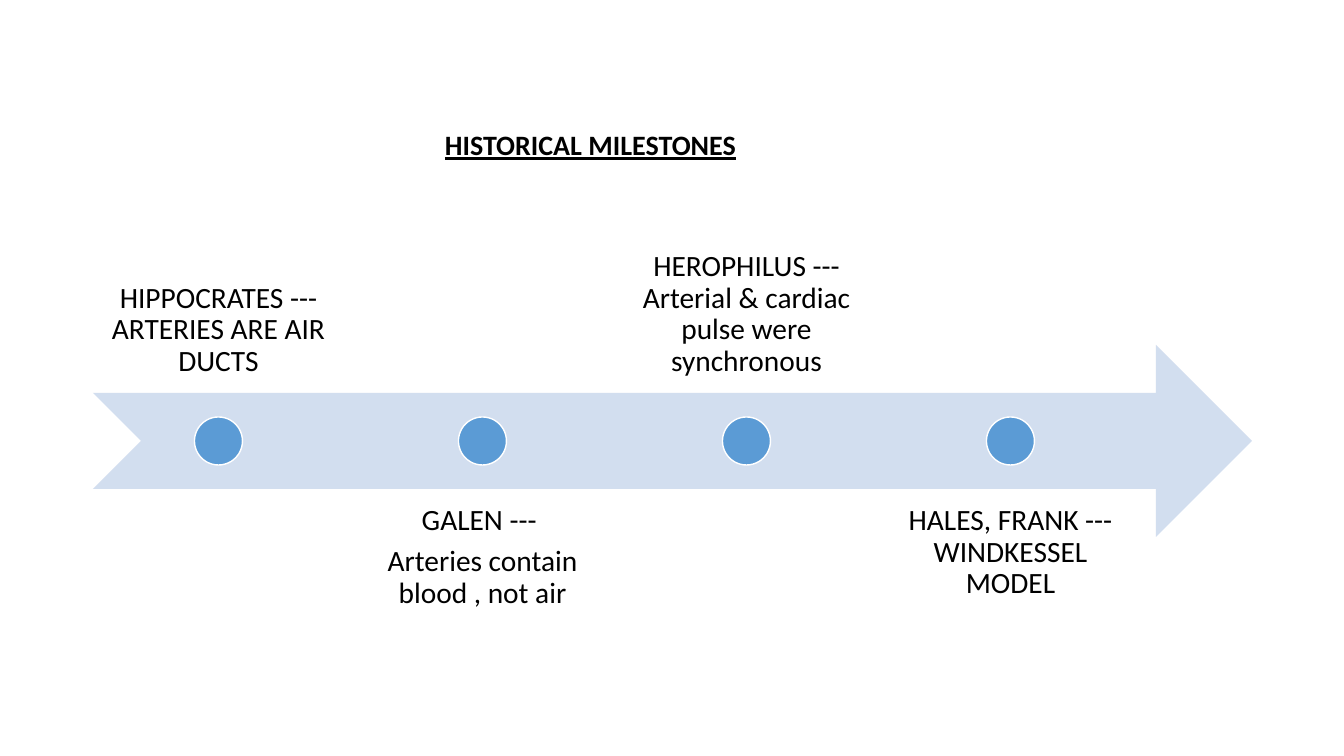
from pptx import Presentation
from pptx.dml.color import RGBColor
from pptx.enum.shapes import MSO_SHAPE
from pptx.enum.text import MSO_ANCHOR, PP_ALIGN
from pptx.util import Pt

# Content: one list of paragraphs per milestone, alternately above and below
TITLE = "HISTORICAL MILESTONES"
MILESTONES = [
    ["HIPPOCRATES --- ARTERIES ARE AIR DUCTS"],
    ["GALEN --- ", "Arteries contain blood , not air"],
    ["HEROPHILUS --- Arterial & cardiac pulse were synchronous"],
    ["HALES, FRANK --- WINDKESSEL MODEL"],
]

# Layout in px
LEFT, PITCH, LABEL_W = 93, 264, 251
BAND_H = 192
ABOVE_Y, ARROW_Y, BELOW_Y = 202, 345, 489
ARROW_W, DOT = 1159, 48


def px(n):
    return round(n * 914400 / 100.8)


def rgb(color):
    return RGBColor.from_string(color)


def add_shape(kind, x, y, w, h, fill, line=None):
    sp = s.shapes.add_shape(kind, px(x), px(y), px(w), px(h))
    sp.shadow.inherit = False
    sp.fill.solid()
    sp.fill.fore_color.rgb = rgb(fill)
    if line:
        sp.line.color.rgb = rgb(line)
        sp.line.width = Pt(1)
    else:
        sp.line.fill.background()
    return sp


def add_text(x, y, w, h, paragraphs, size, anchor, inset, after=0, heading=False):
    tf = s.shapes.add_textbox(px(x), px(y), px(w), px(h)).text_frame
    tf.word_wrap = True
    tf.vertical_anchor = anchor
    tf.margin_left = tf.margin_right = px(inset)
    tf.margin_top = tf.margin_bottom = px(inset)
    for i, text in enumerate(paragraphs):
        p = tf.add_paragraph() if i else tf.paragraphs[0]
        p.alignment = PP_ALIGN.CENTER
        p.line_spacing = 0.9
        p.space_after = Pt(after)
        r = p.add_run()
        r.text = text
        r.font.name = "Calibri"
        r.font.size = Pt(size)
        r.font.color.rgb = rgb("000000")
        if heading:
            r.font.bold = r.font.underline = True


prs = Presentation()
prs.slide_width, prs.slide_height = px(1344), px(756)
s = prs.slides.add_slide(prs.slide_layouts[6])

# Title
add_text(72, 112, 1037, 69, [TITLE], 20, MSO_ANCHOR.MIDDLE, 5, heading=True)

# Timeline arrow
add_shape(MSO_SHAPE.NOTCHED_RIGHT_ARROW, LEFT, ARROW_Y, ARROW_W, BAND_H, "D2DEEF")

# Milestone labels and dots
for i, paragraphs in enumerate(MILESTONES):
    x = LEFT + i * PITCH
    below = i % 2
    add_text(x, BELOW_Y if below else ABOVE_Y, LABEL_W, BAND_H, paragraphs, 21,
             MSO_ANCHOR.TOP if below else MSO_ANCHOR.BOTTOM, 16, after=7)
    add_shape(MSO_SHAPE.OVAL, x + (LABEL_W - DOT) / 2, ARROW_Y + (BAND_H - DOT) / 2,
              DOT, DOT, "5B9BD5", "FFFFFF")

prs.save("out.pptx")
